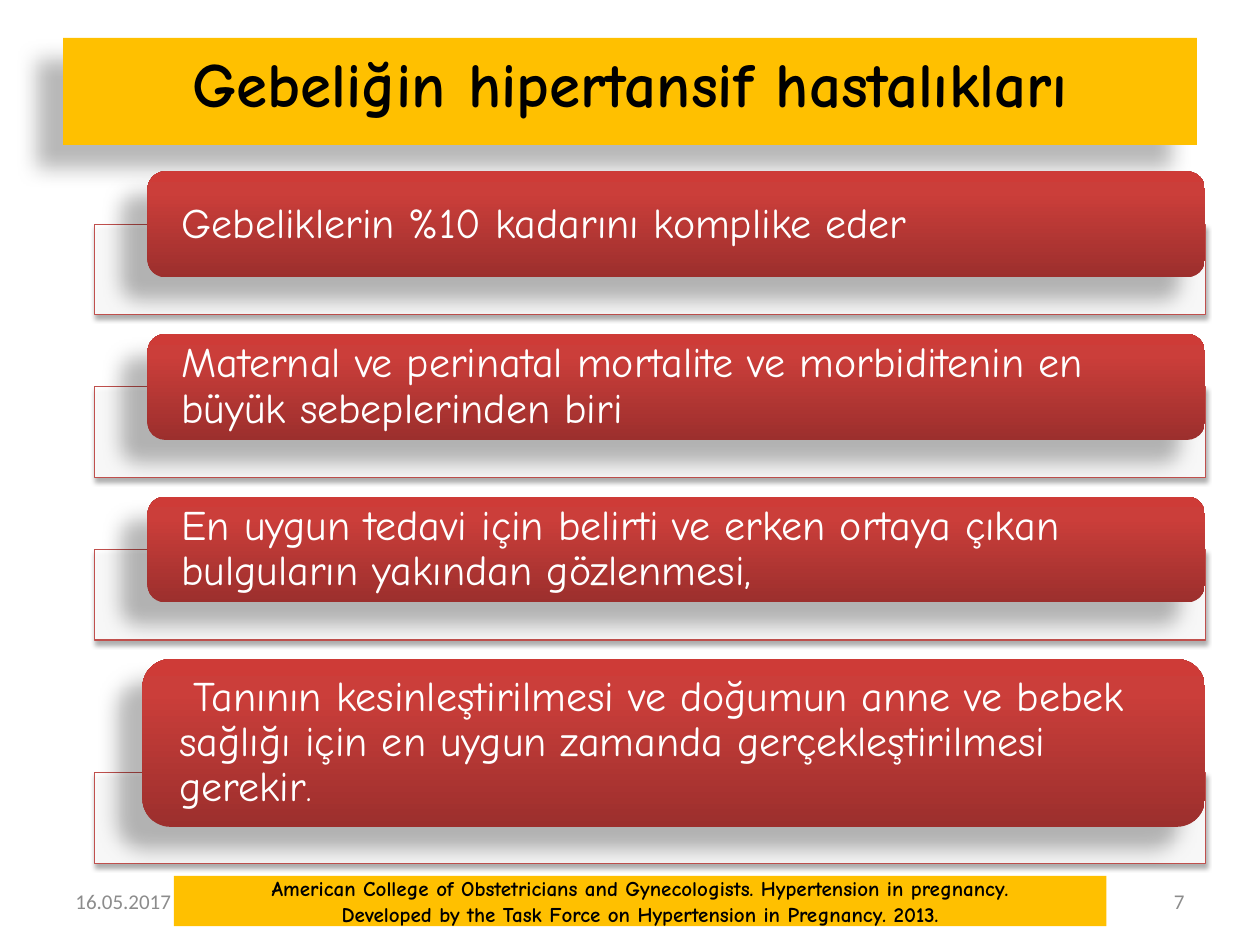
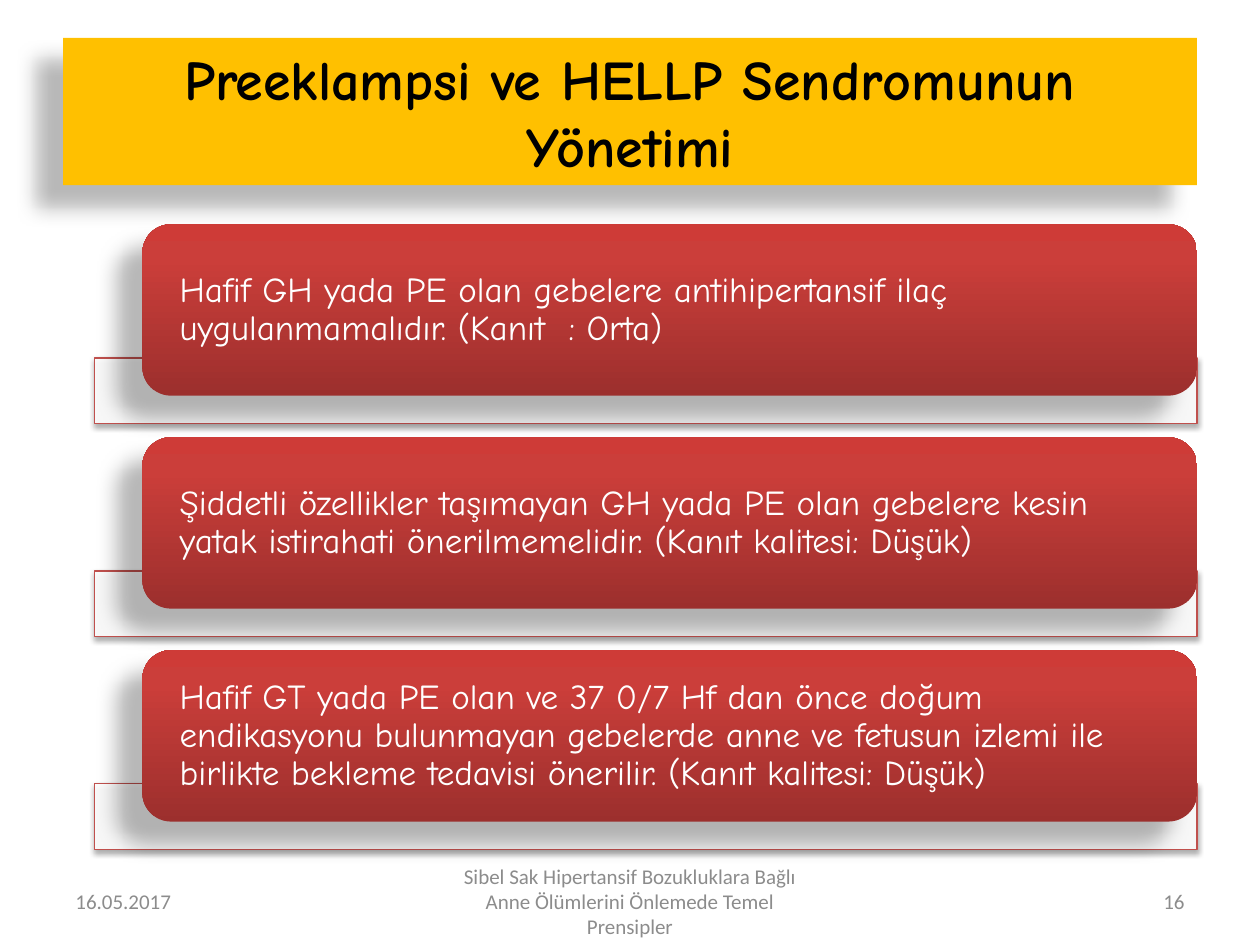
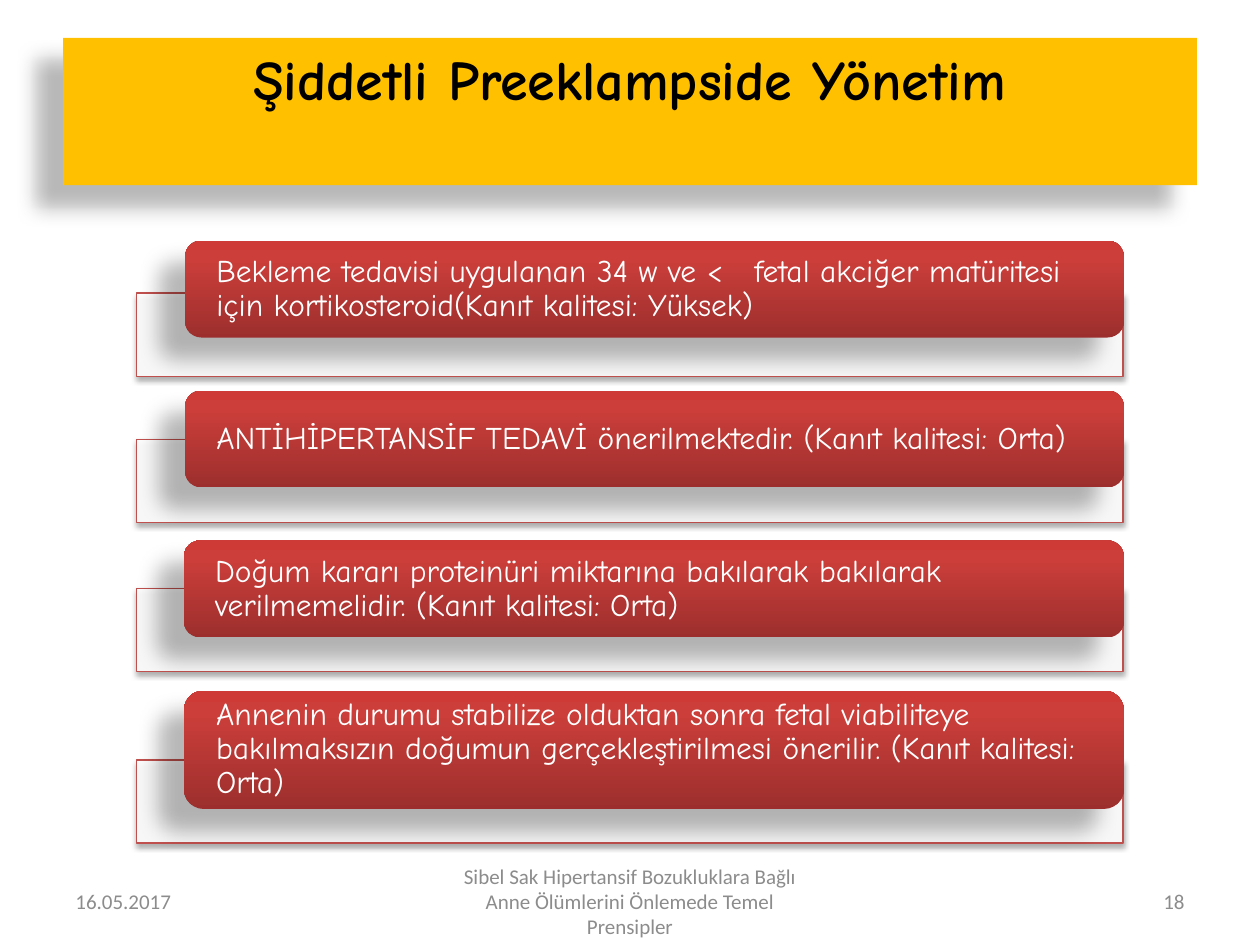
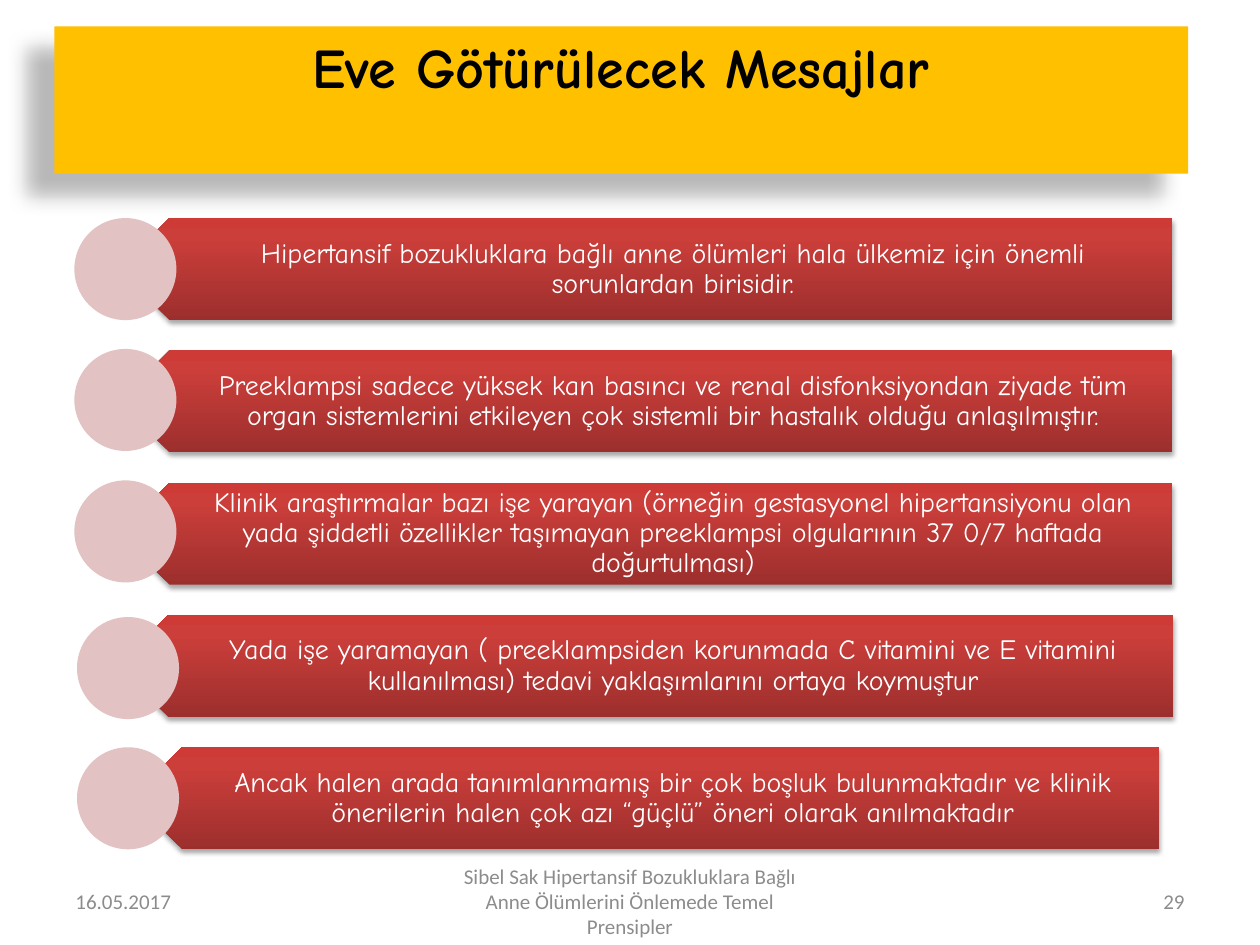
from copy import deepcopy
from dataclasses import dataclass
from typing import NamedTuple

from lxml.etree import SubElement
from pptx import Presentation
from pptx.dml.color import RGBColor
from pptx.enum.shapes import MSO_SHAPE
from pptx.enum.text import MSO_ANCHOR, MSO_AUTO_SIZE, PP_ALIGN
from pptx.oxml.ns import qn
from pptx.shapes.autoshape import Shape
from pptx.slide import Slide
from pptx.util import Pt

GOLD, BLACK, WHITE = "FFC000", "000000", "FFFFFF"
GREY, RED, PINK = "8C8C8C", "C0504D", "E2C2C2"
BLEND = [(0, "9C2F2D"), (0.8, "CB3E3A"), (1, "CE3B37")]
COMIC, PLAIN = "Comic Neue", "Calibri"
LEFT, MID, RIGHT = PP_ALIGN.LEFT, PP_ALIGN.CENTER, PP_ALIGN.RIGHT
DATE = "16.05.2017"
TALK = "Sibel Sak Hipertansif Bozukluklara Bağlı Anne Ölümlerini Önlemede Temel Prensipler"


class Box(NamedTuple):
    left: float
    top: float
    wide: float
    tall: float


class Shade(NamedTuple):
    alpha: int
    blur: float
    dist: float
    angle: int


DEEP = Shade(28, 11.8, 19.7, 141)
SOFT = Shade(35, 3.1, 1.8, 90)
BAND = Box(36, 21.6, 648, 84.2)
FOOT_TOP, FOOT_TALL = 500.5, 28.8


@dataclass
class Card:
    text: str
    left: float
    tall: float
    lap: float
    tail: str = ""


@dataclass
class Stack:
    top: float
    pitch: float
    right: float
    left: float
    wide: float
    tall: float
    size: float
    inset: float
    cards: list[Card]


@dataclass
class Row:
    text: str
    left: float
    wide: float
    dot: tuple[float, float]


@dataclass
class Page:
    title: str
    number: str
    band: Box = BAND
    size: float = 32
    source: tuple[str, ...] = ()
    stack: Stack | None = None


PAGES = [
    Page("Gebeliğin hipertansif hastalıkları", "7", BAND._replace(tall=61.2), 36,
         ("American College of Obstetricians and Gynecologists. Hypertension in pregnancy.",
          "Developed by the Task Force on Hypertension in Pregnancy. 2013."),
         Stack(98, 92.9, 688.5, 54, 635, 51.8, 24, 16.5, [
             Card("Gebeliklerin %10 kadarını komplike eder", 84.3, 60.5, 30.4),
             Card("Maternal ve perinatal mortalite ve morbiditenin en büyük "
                  "sebeplerinden biri", 84.3, 60.5, 30.4),
             Card("En uygun tedavi için belirti ve erken ortaya çıkan bulguların "
                  "yakından gözlenmesi,", 84.3, 60.5, 30.4),
             Card(" Tanının kesinleştirilmesi ve doğumun anne ve bebek sağlığı için "
                  "en uygun zamanda gerçekleştirilmesi gerekir", 81.4, 95.8, 30.9, "."),
         ])),
    Page("Preeklampsi ve HELLP Sendromunun Yönetimi", "16",
         stack=Stack(128.2, 121.7, 684, 54, 630, 37.4, 20, 16.5, [
             Card("Hafif GH yada PE olan gebelere antihipertansif ilaç "
                  "uygulanmamalıdır. (Kanıt  : Orta)", 81.4, 97.9, 21.6),
             Card("Şiddetli özellikler taşımayan GH yada PE olan gebelere kesin yatak "
                  "istirahati önerilmemelidir. (Kanıt kalitesi: Düşük)", 81.4, 97.9, 21.6),
             Card("Hafif GT yada PE olan ve 37 0/7 Hf dan önce doğum endikasyonu "
                  "bulunmayan gebelerde anne ve fetusun izlemi ile birlikte bekleme "
                  "tedavisi önerilir. (Kanıt kalitesi: Düşük)", 81.4, 97.9, 21.6),
         ])),
    Page("Şiddetli Preeklampside Yönetim", "18",
         stack=Stack(137.5, 85.7, 642.2, 77.8, 564, 47.5, 18, 15.1, [
             Card("Bekleme tedavisi uygulanan 34 w ve <   fetal akciğer matüritesi için "
                  "kortikosteroid(Kanıt kalitesi: Yüksek)", 105.8, 55.4, 25.4),
             Card("ANTİHİPERTANSİF TEDAVİ önerilmektedir. (Kanıt kalitesi: Orta)",
                  105.8, 55.4, 27.4),
             Card("Doğum kararı proteinüri miktarına bakılarak bakılarak verilmemelidir. "
                  "(Kanıt kalitesi: Orta)", 105.1, 55.4, 28),
             Card("Annenin durumu stabilize olduktan sonra fetal viabiliteye bakılmaksızın "
                  "doğumun gerçekleştirilmesi önerilir. (Kanıt kalitesi: Orta)",
                  105.1, 67.7, 28),
         ])),
    Page("Eve Götürülecek Mesajlar", "29", BAND._replace(left=31, top=15.1)),
]

ROW_TOP, ROW_PITCH, ROW_TALL, NOSE = 124.6, 75.6, 58.3, 14.4
ROWS = [
    Row("Hipertansif bozukluklara bağlı anne ölümleri hala ülkemiz için önemli "
        "sorunlardan birisidir.", 67.7, 602, (42.5, 124.6)),
    Row("Preeklampsi sadece yüksek kan basıncı ve renal disfonksiyondan ziyade tüm "
        "organ sistemlerini etkileyen çok sistemli bir hastalık olduğu anlaşılmıştır.",
        67.7, 602, (42.5, 199.4)),
    Row("Klinik araştırmalar bazı işe yarayan (örneğin gestasyonel hipertansiyonu olan "
        "yada şiddetli özellikler taşımayan preeklampsi olgularının 37 0/7 haftada "
        "doğurtulması)", 67.7, 602, (42.5, 274.5)),
    Row("Yada işe yaramayan ( preeklampsiden korunmada C vitamini ve E vitamini "
        "kullanılması) tedavi yaklaşımlarını ortaya koymuştur",
        67, 603.4, (44, 352.6)),
    Row("Ancak halen arada tanımlanmamış bir çok boşluk bulunmaktadır ve klinik "
        "önerilerin halen çok azı “güçlü” öneri olarak anılmaktadır",
        74.9, 587.5, (44, 427)),
]


def ink(code: str) -> RGBColor:
    return RGBColor.from_string(code)


def write(shape: Shape, *lines: str, size: float = 12, font: str = COMIC,
          color: str = WHITE, bold: bool = False, align: PP_ALIGN = LEFT,
          anchor: MSO_ANCHOR = MSO_ANCHOR.MIDDLE, space: float = 1,
          inset: tuple[float, ...] = (7.2, 3.6, 7.2, 3.6), tail: str = "") -> None:
    frame = shape.text_frame
    frame.word_wrap = True
    frame.auto_size = MSO_AUTO_SIZE.NONE
    frame.vertical_anchor = anchor
    (frame.margin_left, frame.margin_top,
     frame.margin_right, frame.margin_bottom) = map(Pt, inset)
    for index, line in enumerate(lines):
        para = frame.add_paragraph() if index else frame.paragraphs[0]
        para.alignment = align
        para.line_spacing = space
        for part, points in ((line, size), (tail, 20)):
            if part:
                run = para.add_run()
                run.text = part
                run.font.size = Pt(points)
                run.font.name = font
                run.font.bold = bold
                run.font.color.rgb = ink(color)


def shade(shape: Shape, look: Shade | None) -> None:
    shape.shadow.inherit = False
    if look:
        effects = shape._element.spPr.find(qn("a:effectLst"))
        outer = SubElement(effects, qn("a:outerShdw"), blurRad=str(Pt(look.blur)),
                           dist=str(Pt(look.dist)), dir=str(look.angle * 60000),
                           algn="ctr", rotWithShape="0")
        color = SubElement(outer, qn("a:srgbClr"), val=BLACK)
        SubElement(color, qn("a:alpha"), val=str(look.alpha * 1000))


def blend(shape: Shape) -> None:
    shape.fill.gradient()
    shape.fill.gradient_angle = 90
    grad = shape._element.spPr.find(qn("a:gradFill"))
    grad.set("rotWithShape", "0")
    stops = grad.find(qn("a:gsLst"))
    stops.append(deepcopy(stops[0]))
    for stop, (place, code) in zip(shape.fill.gradient_stops, BLEND):
        stop.position = place
        stop.color.rgb = ink(code)


def draw(slide: Slide, kind: MSO_SHAPE, box: Box, fill: str = "", line: str = "",
         look: Shade | None = None, alpha: int = 100) -> Shape:
    shape = slide.shapes.add_shape(kind, *map(Pt, box))
    if fill:
        shape.fill.solid()
        shape.fill.fore_color.rgb = ink(fill)
    else:
        blend(shape)
    if alpha < 100:
        color = shape._element.spPr.find(qn("a:solidFill"))[0]
        SubElement(color, qn("a:alpha"), val=str(alpha * 1000))
    if line:
        shape.line.color.rgb = ink(line)
        shape.line.width = Pt(0.75)
    else:
        shape.line.fill.background()
    shade(shape, look)
    return shape


def label(slide: Slide, box: Box, text: str, **style) -> None:
    write(slide.shapes.add_textbox(*map(Pt, box)), text, **style)


def head(slide: Slide, page: Page) -> None:
    title = slide.shapes.title
    title.left, title.top, title.width, title.height = map(Pt, page.band)
    title.fill.solid()
    title.fill.fore_color.rgb = ink(GOLD)
    shade(title, DEEP)
    write(title, page.title, size=page.size, color=BLACK, bold=True, align=MID,
          anchor=MSO_ANCHOR.TOP)


def foot(slide: Slide, page: Page) -> None:
    notes = [(36, 168, DATE, LEFT), (516, 168, page.number, RIGHT)]
    if page.source:
        bar = draw(slide, MSO_SHAPE.RECTANGLE, Box(99.4, FOOT_TOP, 532.8, FOOT_TALL), GOLD)
        write(bar, *page.source, color=BLACK, bold=True, align=MID)
    else:
        notes.append((246, 228, TALK, MID))
    for left, wide, text, align in notes:
        label(slide, Box(left, FOOT_TOP, wide, FOOT_TALL), text, font=PLAIN,
              color=GREY, align=align)


def pile(slide: Slide, stack: Stack) -> None:
    for index, card in enumerate(stack.cards):
        top = stack.top + index * stack.pitch
        under = Box(stack.left, top + card.tall - card.lap, stack.wide, stack.tall)
        draw(slide, MSO_SHAPE.RECTANGLE, under, WHITE, RED, SOFT, 90)
        over = Box(card.left, top, stack.right - card.left, card.tall)
        shape = draw(slide, MSO_SHAPE.ROUNDED_RECTANGLE, over, look=DEEP)
        write(shape, card.text, size=stack.size, space=0.9,
              inset=(stack.inset, 0, stack.inset, 0), tail=card.tail)


def chain(slide: Slide) -> None:
    for index, row in enumerate(ROWS):
        box = Box(row.left, ROW_TOP + index * ROW_PITCH, row.wide, ROW_TALL)
        plate = draw(slide, MSO_SHAPE.PENTAGON, box, look=SOFT)
        plate.rotation = 180
        label(slide, box._replace(left=box.left + NOSE, wide=box.wide - NOSE), row.text,
              size=16, align=MID, space=0.9, inset=(25.9, 5, 8.6, 5))
        draw(slide, MSO_SHAPE.OVAL, Box(*row.dot, ROW_TALL, ROW_TALL), PINK)


def main() -> None:
    deck = Presentation()
    deck.slide_width, deck.slide_height = Pt(720), Pt(540)
    for page in PAGES:
        slide = deck.slides.add_slide(deck.slide_layouts[5])
        head(slide, page)
        foot(slide, page)
        if page.stack:
            pile(slide, page.stack)
        else:
            chain(slide)
    deck.save("out.pptx")


if __name__ == "__main__":
    main()
